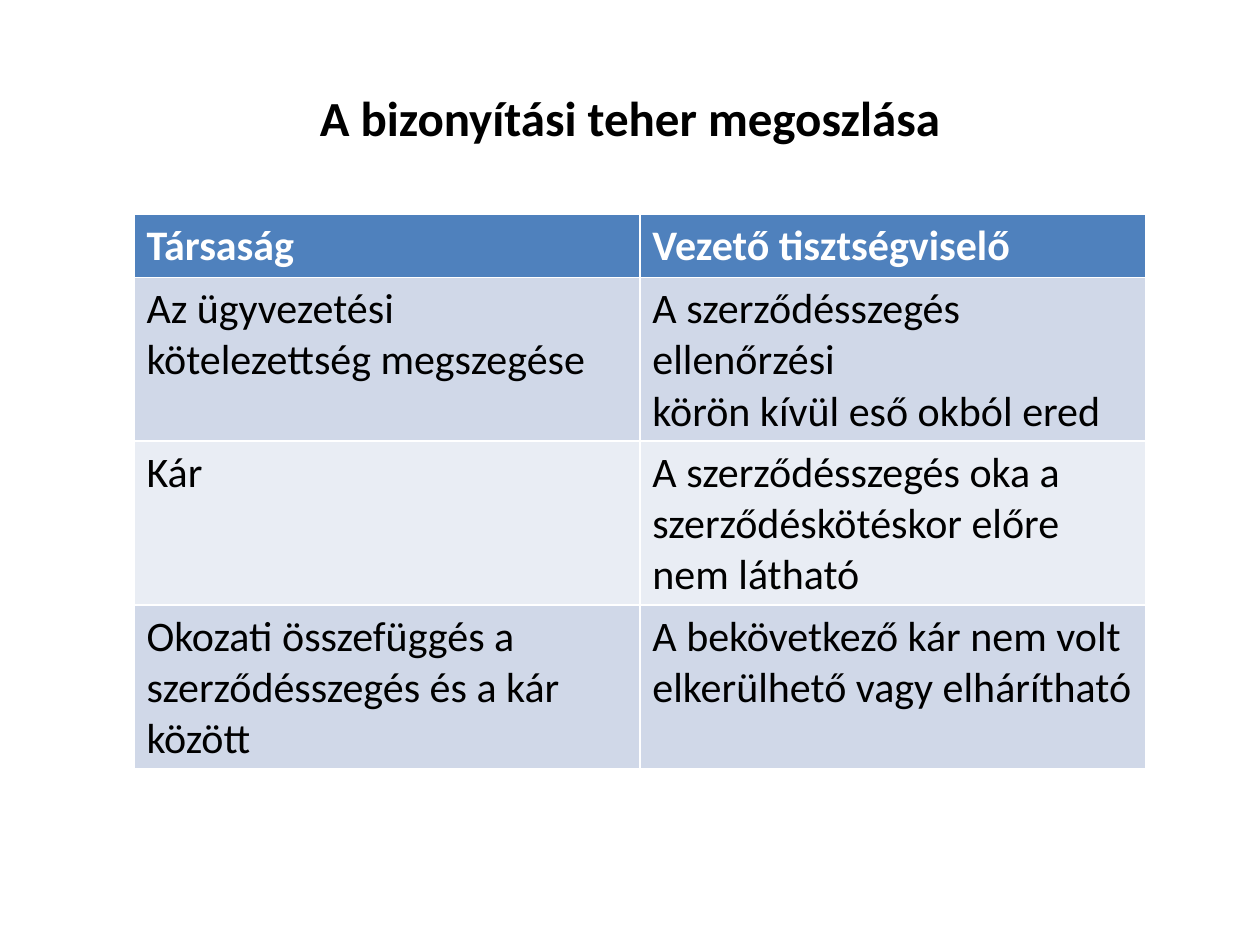
from pptx import Presentation, util as u
from pptx.dml.color import RGBColor
from pptx.enum import text

BLACK = RGBColor(0x00, 0x00, 0x00)
WHITE = RGBColor(0xFF, 0xFF, 0xFF)
BLUE = RGBColor(0x4F, 0x81, 0xBD)
MID = RGBColor(0xD0, 0xD8, 0xE8)
PALE = RGBColor(0xE9, 0xED, 0xF4)


def style(frame, size, color, bold):
    for para in frame.paragraphs:
        font = para.font
        font.name = "Calibri"
        font.size = u.Pt(size)
        font.bold = bold
        font.color.rgb = color


deck = Presentation()
deck.slide_width, deck.slide_height = u.Cm(25.4), u.Cm(19.05)
slide = deck.slides.add_slide(deck.slide_layouts[6])

# Title
title = slide.shapes.add_textbox(u.Cm(1.27), u.Cm(0.76), u.Cm(22.86), u.Cm(3.18))
frame = title.text_frame
frame.word_wrap = True
frame.vertical_anchor = text.MSO_ANCHOR.MIDDLE
frame.text = "A bizonyítási teher megoszlása"
frame.paragraphs[0].alignment = text.PP_ALIGN.CENTER
style(frame, 28, BLACK, True)

# Table: the default style supplies the white cell borders
rows = [
    ("Társaság", "Vezető tisztségviselő"),
    ("Az ügyvezetési kötelezettség megszegése",
     "A szerződésszegés ellenőrzési\nkörön kívül eső okból ered"),
    ("Kár",
     "A szerződésszegés oka a szerződéskötéskor előre nem látható"),
    ("Okozati összefüggés a szerződésszegés és a kár között",
     "A bekövetkező kár nem volt elkerülhető vagy elhárítható"),
]
table = slide.shapes.add_table(len(rows), 2, u.Cm(2.7), u.Cm(4.32),
                               u.Cm(20.4), u.Cm(4.16)).table

# Header in blue, then alternating bands
for r, row in enumerate(rows):
    head = r == 0
    fill = BLUE if head else (PALE, MID)[r % 2]
    for c, words in enumerate(row):
        cell = table.cell(r, c)
        cell.text = words
        cell.fill.solid()
        cell.fill.fore_color.rgb = fill
        style(cell.text_frame, 24, WHITE if head else BLACK, head)

deck.save("out.pptx")
